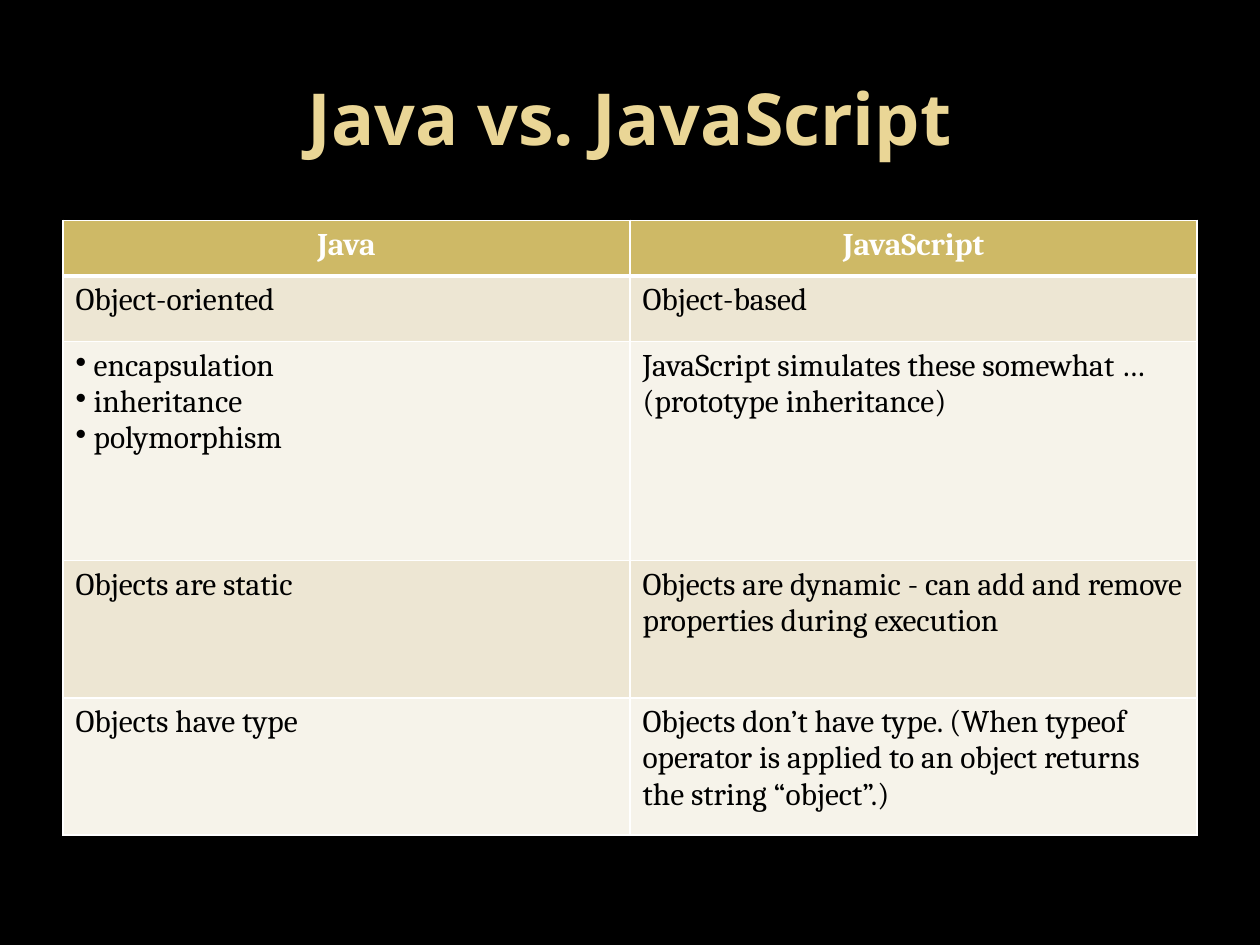
from lxml.etree import SubElement
from pptx import Presentation
from pptx.dml.color import RGBColor
from pptx.enum.text import MSO_ANCHOR, PP_ALIGN
from pptx.oxml.ns import qn
from pptx.util import Inches, Pt

COLORS = {
    "background": "000000",
    "title": "EAD696",
    "header": "CEB966",
    "band_dark": "EDE6D3",
    "band_light": "F6F3EA",
    "light": "FFFFFF",
    "text": "000000",
}
TITLE_FONT, BODY_FONT = "Open Sans", "Cambria"
WIDTH, HEIGHT = Inches(10), Inches(7.5)
TITLE_BOX = (0.05, 0.04, 0.9, 0.167)
TABLE_BOX = (0.05, 0.2333, 0.9, 0.6507)
ROW_HEIGHTS = (0.44, 0.52, 1.74, 1.09, 1.09)
BULLET = "•"
ROWS = (
    ("Java", "JavaScript"),
    ("Object-oriented", "Object-based"),
    (
        "• encapsulation\n• inheritance\n• polymorphism",
        "JavaScript simulates these somewhat … (prototype inheritance)",
    ),
    (
        "Objects are static",
        "Objects are dynamic - can add and remove properties during execution",
    ),
    (
        "Objects have type",
        "Objects don’t have type. (When typeof operator is applied to an object "
        "returns the string “object”.)",
    ),
)


def color(name):
    """Return the named colour."""
    return RGBColor.from_string(COLORS[name])


def place(box):
    """Turn shares of the slide into left, top, width and height."""
    left, top, width, height = box
    return (
        int(left * WIDTH),
        int(top * HEIGHT),
        int(width * WIDTH),
        int(height * HEIGHT),
    )


def style_paragraph(para, font_name, size, color_name, bold, centred):
    """Format a paragraph and its runs."""
    para.alignment = PP_ALIGN.CENTER if centred else PP_ALIGN.LEFT
    for span in para.runs:
        span.font.name = font_name
        span.font.size = Pt(size)
        span.font.bold = bold
        span.font.color.rgb = color(color_name)


def add_bullet(para):
    """Turn a typed leading bullet into a real one."""
    para.text = para.text.removeprefix(BULLET)
    properties = para._p.get_or_add_pPr()
    properties.set("marL", "0")
    properties.set("indent", "0")
    SubElement(properties, qn("a:buChar"), char=BULLET)


def add_borders(cell, top, bottom):
    """Draw white borders of the given top and bottom weights."""
    properties = cell._tc.get_or_add_tcPr()
    for side, weight in (("L", 1), ("R", 1), ("T", top), ("B", bottom)):
        line = SubElement(properties, qn(f"a:ln{side}"), w=str(Pt(weight)))
        fill = SubElement(line, qn("a:solidFill"))
        SubElement(fill, qn("a:srgbClr"), val=COLORS["light"])


def add_title(page, box, text):
    """Add the centred slide title."""
    frame = page.shapes.add_textbox(*place(box)).text_frame
    frame.word_wrap = True
    frame.vertical_anchor = MSO_ANCHOR.MIDDLE
    frame.text = text
    style_paragraph(frame.paragraphs[0], TITLE_FONT, 41, "title", True, True)


def fill_cell(cell, text, row):
    """Write and format one cell according to its row."""
    header = row == 0
    add_borders(cell, 3 if row == 1 else 1, 3 if header else 1)
    band = "band_dark" if row % 2 else "band_light"
    cell.fill.solid()
    cell.fill.fore_color.rgb = color("header" if header else band)
    cell.text_frame.text = text
    for para in cell.text_frame.paragraphs:
        if para.text.startswith(BULLET):
            add_bullet(para)
        style_paragraph(
            para, BODY_FONT, 18, "light" if header else "text", header, header
        )


def add_comparison(page, box, rows):
    """Add the two-column comparison table."""
    table = page.shapes.add_table(len(rows), len(rows[0]), *place(box)).table
    for index, (texts, height) in enumerate(zip(rows, ROW_HEIGHTS)):
        table.rows[index].height = Inches(height)
        for column, text in enumerate(texts):
            fill_cell(table.cell(index, column), text, index)


def main():
    """Build and save the slide."""
    deck = Presentation()
    deck.slide_width, deck.slide_height = WIDTH, HEIGHT
    page = deck.slides.add_slide(deck.slide_layouts[6])
    page.background.fill.solid()
    page.background.fill.fore_color.rgb = color("background")
    add_title(page, TITLE_BOX, "Java vs. JavaScript")
    add_comparison(page, TABLE_BOX, ROWS)
    deck.save("out.pptx")


if __name__ == "__main__":
    main()
